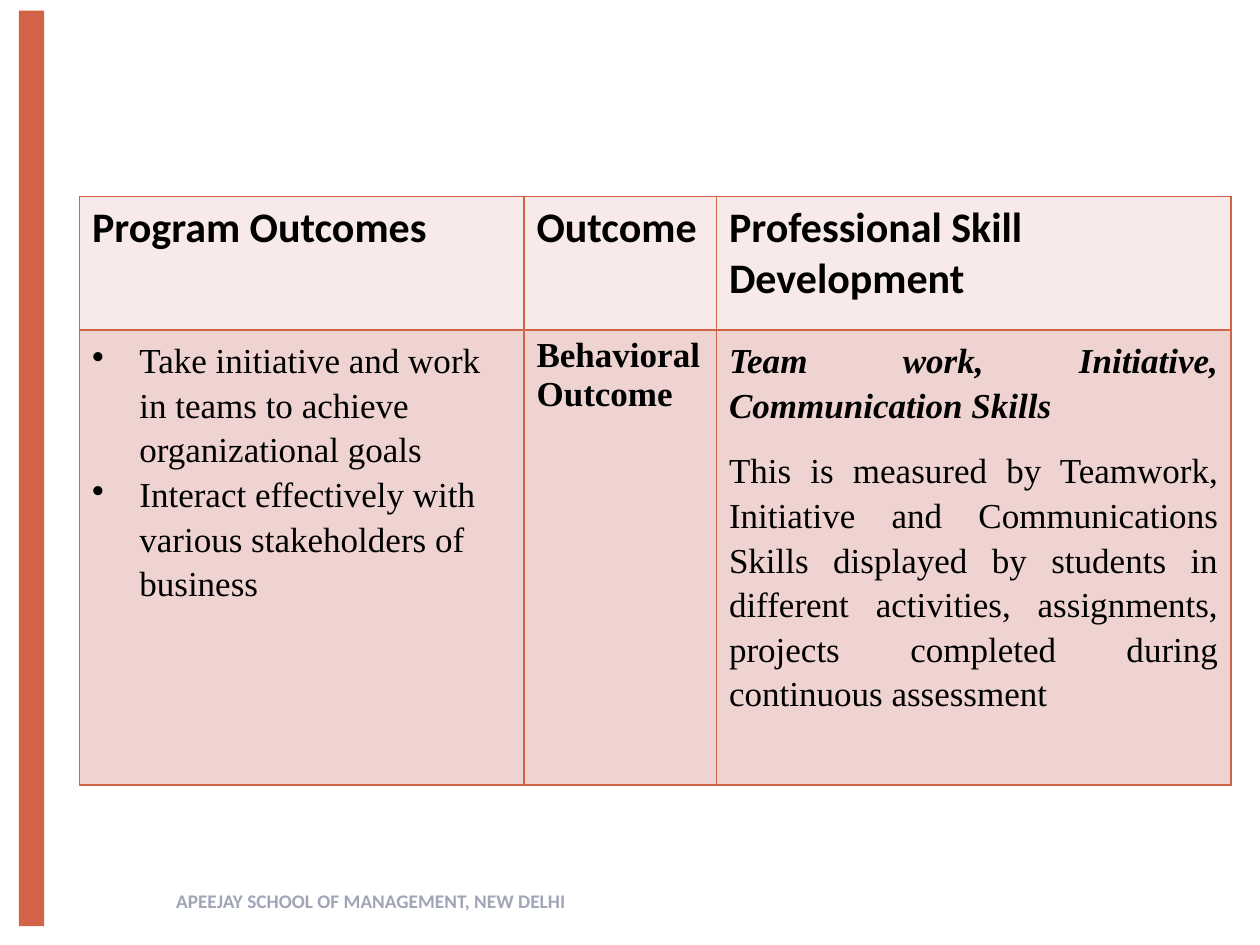
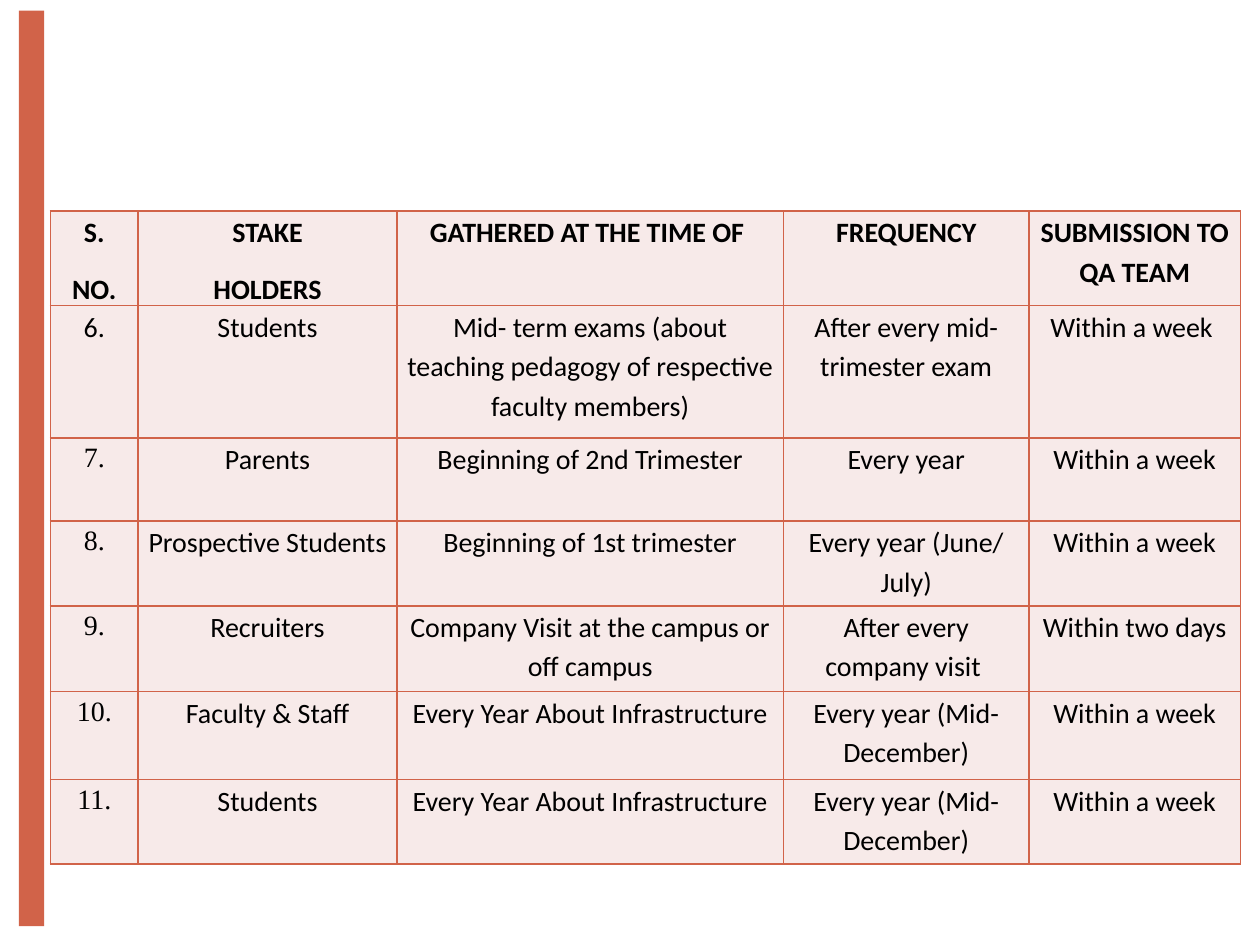
"""Build two slides of outcome and stakeholder feedback tables."""
from lxml import etree
from pptx import Presentation
from pptx.dml.color import RGBColor
from pptx.enum.shapes import MSO_SHAPE
from pptx.enum.text import MSO_ANCHOR, PP_ALIGN
from pptx.oxml.ns import qn
from pptx.util import Pt

RECTANGLE = MSO_SHAPE.RECTANGLE
MIDDLE = MSO_ANCHOR.MIDDLE
CENTER = PP_ALIGN.CENTER
JUSTIFY = PP_ALIGN.JUSTIFY

RUST = RGBColor(0xD1, 0x63, 0x49)
PALE_ROSE = RGBColor(0xF7, 0xEA, 0xE9)
ROSE = RGBColor(0xEE, 0xD3, 0xD0)
BLACK = RGBColor(0, 0, 0)
FOOTER_GRAY = RGBColor(0xA0, 0xA5, 0xB8)

SANS = "Calibri"
SERIF = "Times New Roman"
BLANK_LAYOUT = 6
BULLET_INDENT = Pt(27)

HEADING = {"name": SANS, "size": Pt(24), "bold": True}
BODY = {"name": SERIF, "size": Pt(20), "bold": False}
BODY_BOLD = {**BODY, "bold": True}
BODY_EMPHASIS = {**BODY_BOLD, "italic": True}
GRID_TEXT = {"name": SANS, "size": Pt(16), "bold": False}
GRID_HEADING = {**GRID_TEXT, "bold": True}
GRID_SERIF = {**GRID_TEXT, "name": SERIF}
FOOTER = {"name": SANS, "size": Pt(11), "bold": True}

BULLET_LIST = {"line_spacing": 1.15}
LABEL = {"alignment": JUSTIFY, "space_after": Pt(18)}
JUSTIFIED = {"alignment": JUSTIFY, "line_spacing": 1.15, "space_after": Pt(12)}
CENTERED = {"alignment": CENTER, "line_spacing": 1.15, "space_after": Pt(10)}
GRID_MARGINS = {
    "margin_left": Pt(3.6), "margin_right": Pt(3.6),
    "margin_top": Pt(0), "margin_bottom": Pt(0),
}

OUTCOME_HEADINGS = ["Program Outcomes", "Outcome", "Professional Skill Development"]
PROGRAM_OUTCOMES = [
    "Take initiative and work in teams to achieve organizational goals",
    "Interact effectively with various stakeholders of business",
]
SKILLS = "Team work, Initiative, Communication Skills"
SKILL_MEASURE = (
    "This is measured by Teamwork, Initiative and Communications Skills "
    "displayed by students in different activities, assignments, projects "
    "completed during continuous assessment"
)

FEEDBACK_HEADINGS = [
    ["S.", "NO."], ["STAKE", "HOLDERS"], ["GATHERED AT THE TIME OF "],
    ["FREQUENCY"], ["SUBMISSION TO QA TEAM"],
]
FEEDBACK_ROWS = [
    ("6.", "Students",
     "Mid- term exams (about teaching pedagogy of respective faculty members)",
     "After every mid- trimester exam", "Within a week "),
    ("7.", "Parents", "Beginning of 2nd Trimester", "Every year", "Within a week"),
    ("8.", "Prospective Students", "Beginning of 1st trimester",
     "Every year (June/ July)", "Within a week"),
    ("9.", "Recruiters", "Company Visit at the campus or off campus",
     "After every company visit ", "Within two days"),
    ("10.", "Faculty & Staff", "Every Year About Infrastructure",
     "Every year (Mid- December)", "Within a week"),
    ("11.", "Students", "Every Year About Infrastructure",
     "Every year (Mid- December)", "Within a week"),
]


def set_attributes(target, values):
    """Set each named attribute on the target."""
    for name, value in values.items():
        setattr(target, name, value)


def add_bullet(paragraph):
    """Give a paragraph a hanging bullet."""
    properties = paragraph._p.get_or_add_pPr()
    properties.set("marL", str(BULLET_INDENT))
    properties.set("indent", str(-BULLET_INDENT))
    etree.SubElement(properties, qn("a:buChar")).set("char", "•")


def write_paragraphs(text_frame, paragraphs, color=BLACK):
    """Write (text, font values, paragraph values) entries."""
    for index, (text, font, layout) in enumerate(paragraphs):
        paragraph = text_frame.paragraphs[0] if index == 0 else text_frame.add_paragraph()
        if layout is BULLET_LIST:
            add_bullet(paragraph)
        set_attributes(paragraph, layout)
        run = paragraph.add_run()
        run.text = text
        set_attributes(run.font, font)
        run.font.color.rgb = color


def add_borders(cell):
    """Draw a thin rust line on all four sides of a cell."""
    properties = cell._tc.get_or_add_tcPr()
    for side in ("lnL", "lnR", "lnT", "lnB"):
        line = etree.SubElement(properties, qn(f"a:{side}"), w=str(Pt(1)))
        fill = etree.SubElement(line, qn("a:solidFill"))
        etree.SubElement(fill, qn("a:srgbClr"), val=str(RUST))


def fill_cell(cell, paragraphs, color, margins):
    """Format a table cell and write its text."""
    add_borders(cell)
    cell.fill.solid()
    cell.fill.fore_color.rgb = color
    set_attributes(cell, margins)
    write_paragraphs(cell.text_frame, paragraphs)


def add_table(slide, left, top, widths, heights, rows, colors, margins):
    """Add a table with one fill colour for each row."""
    table = slide.shapes.add_table(
        len(heights), len(widths), Pt(left), Pt(top),
        Pt(sum(widths)), Pt(sum(heights))).table
    set_attributes(table, {"first_row": False, "horz_banding": False})
    for column, width in zip(table.columns, widths):
        column.width = Pt(width)
    for table_row, height, cells, color in zip(table.rows, heights, rows, colors):
        table_row.height = Pt(height)
        for cell, paragraphs in zip(table_row.cells, cells):
            fill_cell(cell, paragraphs, color, margins)


def add_banded_slide(presentation):
    """Add a blank slide with the rust band at its left edge."""
    slide = presentation.slides.add_slide(presentation.slide_layouts[BLANK_LAYOUT])
    band = slide.shapes.add_shape(RECTANGLE, Pt(10.8), Pt(6), Pt(14.4), Pt(523.2))
    band.shadow.inherit = False
    band.fill.solid()
    band.fill.fore_color.rgb = RUST
    band.line.fill.background()
    return slide


def add_footer(slide, text):
    """Add the footer line."""
    frame = slide.shapes.add_textbox(Pt(93.6), Pt(500.4), Pt(473), Pt(28.8)).text_frame
    set_attributes(frame, {"word_wrap": True, "vertical_anchor": MIDDLE})
    write_paragraphs(frame, [(text, FOOTER, {})], FOOTER_GRAY)


def build_outcomes_slide(presentation):
    """Build the program outcomes slide."""
    slide = add_banded_slide(presentation)
    add_footer(slide, "APEEJAY SCHOOL OF MANAGEMENT, NEW DELHI")
    rows = [
        [[(heading, HEADING, {})] for heading in OUTCOME_HEADINGS],
        [
            [(outcome, BODY, BULLET_LIST) for outcome in PROGRAM_OUTCOMES],
            [("Behavioral Outcome", BODY_BOLD, LABEL)],
            [(SKILLS, BODY_EMPHASIS, JUSTIFIED), (SKILL_MEASURE, BODY, JUSTIFIED)],
        ],
    ]
    add_table(slide, 45.4, 112.3, [254, 110, 294], [76.3, 260], rows,
              [PALE_ROSE, ROSE], {})


def build_feedback_slide(presentation):
    """Build the stakeholder feedback schedule slide."""
    slide = add_banded_slide(presentation)
    rows = [[[(line, GRID_HEADING, CENTERED) for line in lines]
             for lines in FEEDBACK_HEADINGS]]
    for index, (number, *details) in enumerate(FEEDBACK_ROWS):
        number_font = GRID_TEXT if index == 0 else GRID_SERIF
        rows.append([[(number, number_font, CENTERED)]]
                    + [[(detail, GRID_TEXT, CENTERED)] for detail in details])
    add_table(slide, 28.8, 120.5, [50.2, 147.8, 221, 140.2, 121],
              [54, 75.6, 47.5, 48.5, 49, 50.4, 48.2], rows,
              [PALE_ROSE] * len(rows), GRID_MARGINS)


def main():
    """Build and save the presentation."""
    presentation = Presentation()
    set_attributes(presentation, {"slide_width": Pt(720), "slide_height": Pt(540)})
    build_outcomes_slide(presentation)
    build_feedback_slide(presentation)
    presentation.save("out.pptx")


if __name__ == "__main__":
    main()
